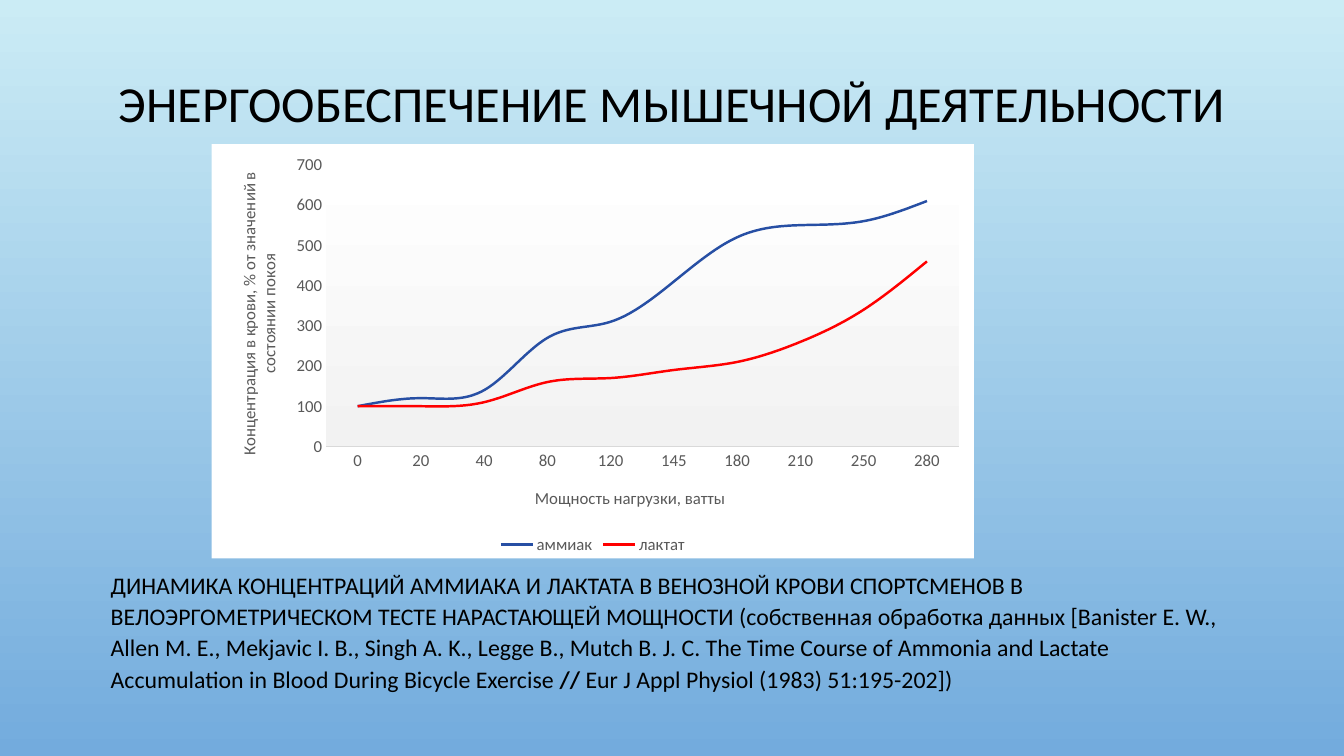
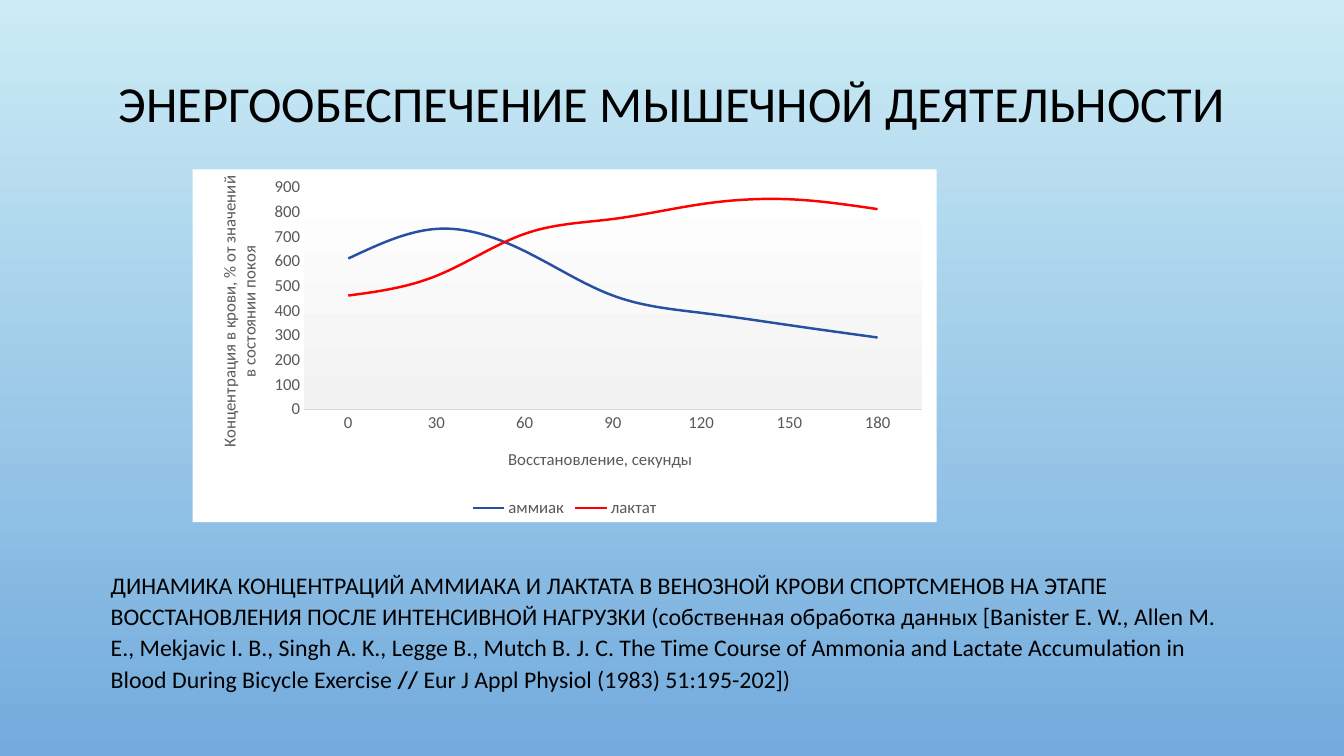
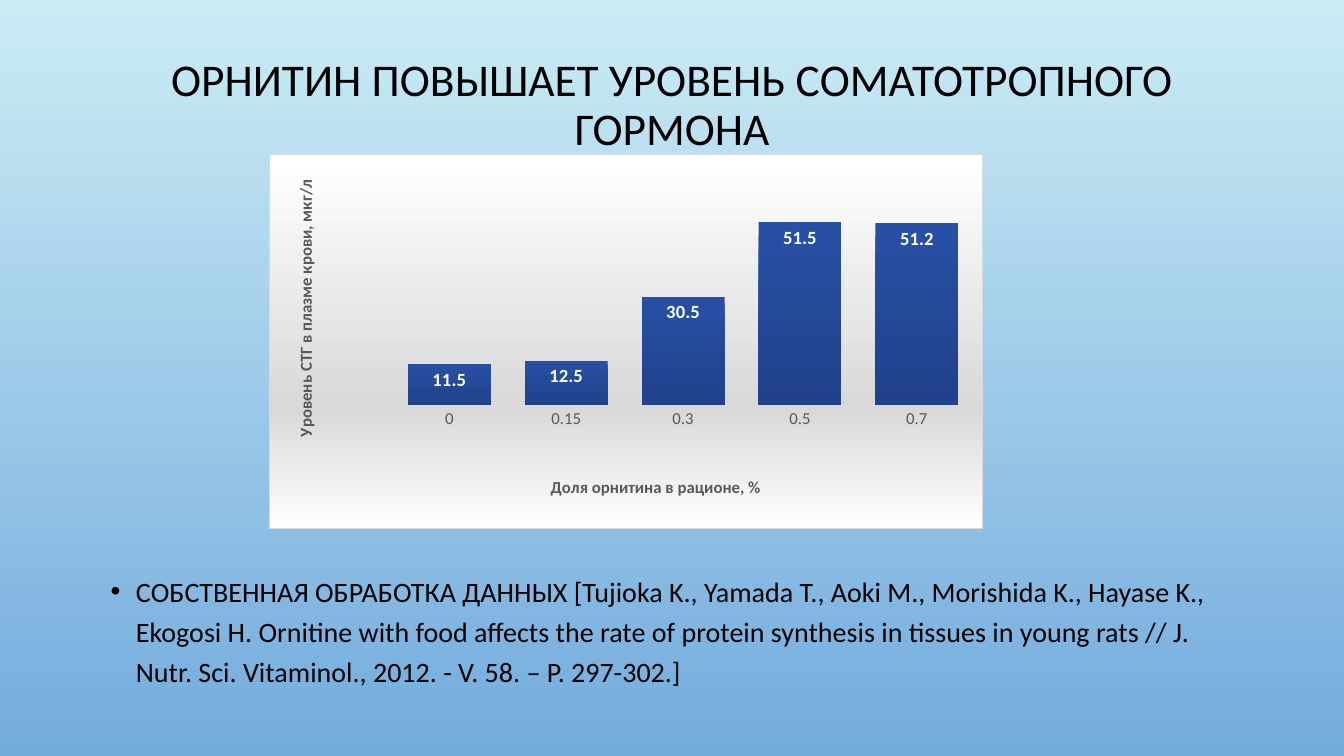
import copy
from dataclasses import dataclass
from typing import Optional

import pptx
import pptx.chart.data
import pptx.dml.color
import pptx.dml.fill
import pptx.dml.line
import pptx.enum.chart
import pptx.enum.text
import pptx.oxml
import pptx.oxml.ns
import pptx.util

Inches = pptx.util.Inches
Pt = pptx.util.Pt
qn = pptx.oxml.ns.qn
Kind = pptx.enum.chart.XL_CHART_TYPE

FACE = "Calibri"
BLACK, WHITE, GREY, RULE = "000000", "FFFFFF", "595959", "D9D9D9"
SKY = [(0, "CBECF5"), (1, "73ABDD")]
PALE = [(0, WHITE), (1, "F2F2F2")]
SILVER = [(0, WHITE), (0.68, RULE), (1, WHITE)]
NAVY = [(0, "274FA4"), (1, "21428A")]
LINES = ["274FA4", "FF0000"]
LEVEL = "Концентрация в крови, % от значений в состоянии покоя"
HEAD = "ЭНЕРГООБЕСПЕЧЕНИЕ МЫШЕЧНОЙ ДЕЯТЕЛЬНОСТИ"
TOPIC = "ДИНАМИКА КОНЦЕНТРАЦИЙ АММИАКА И ЛАКТАТА В ВЕНОЗНОЙ КРОВИ СПОРТСМЕНОВ "
CITE = (
    " (собственная обработка данных [Banister E. W., Allen M. E., Mekjavic I. B., "
    "Singh A. K., Legge B., Mutch B. J. C. The Time Course of Ammonia and Lactate "
    "Accumulation in Blood During Bicycle Exercise "
)
ISSUE = [("// ", True), ("Eur J Appl Physiol (1983) 51:195-202])", False)]


@dataclass
class Label:
    text: str
    spot: tuple[float, float]


@dataclass
class Graph:
    kind: Kind
    box: tuple[float, float, float, float]
    plot: tuple[float, float, float, float]
    across: Label
    up: Label
    cats: list[str]
    rows: dict[str, list[float]]


@dataclass
class Page:
    title: str
    size: float
    note: list[tuple[str, bool]]
    graph: Graph
    point: float = 17
    space: float = 1.1
    bullet: Optional[str] = None


PAGES = [
    Page(
        HEAD, 36,
        [(TOPIC + "В ВЕЛОЭРГОМЕТРИЧЕСКОМ ТЕСТЕ НАРАСТАЮЩЕЙ МОЩНОСТИ" + CITE, False), *ISSUE],
        Graph(
            Kind.LINE, (2.1, 1.43, 7.56, 4.11), (0.15, 0.05, 0.83, 0.68),
            Label("Мощность нагрузки, ватты", (0.42, 0.82)),
            Label(LEVEL, (0.03, 0.06)),
            ["0", "20", "40", "80", "120", "145", "180", "210", "250", "280"],
            {
                "аммиак": [100, 120, 140, 270, 310, 410, 520, 550, 560, 610],
                "лактат": [100, 100, 110, 160, 170, 190, 210, 260, 340, 460],
            },
        ),
    ),
    Page(
        HEAD, 36,
        [(TOPIC + "НА ЭТАПЕ ВОССТАНОВЛЕНИЯ ПОСЛЕ ИНТЕНСИВНОЙ НАГРУЗКИ" + CITE, False), *ISSUE],
        Graph(
            Kind.LINE, (1.91, 1.68, 7.38, 3.5), (0.15, 0.05, 0.83, 0.63),
            Label("Восстановление, секунды", (0.42, 0.78)),
            Label(LEVEL, (0.03, 0.01)),
            ["0", "30", "60", "90", "120", "150", "180"],
            {
                "аммиак": [610, 730, 640, 460, 390, 340, 290],
                "лактат": [460, 540, 710, 770, 830, 850, 810],
            },
        ),
    ),
    Page(
        "ОРНИТИН ПОВЫШАЕТ УРОВЕНЬ СОМАТОТРОПНОГО ГОРМОНА", 32.4,
        [(
            "СОБСТВЕННАЯ ОБРАБОТКА ДАННЫХ [Tujioka K., Yamada T., Aoki M., Morishida K., "
            "Hayase K., Ekogosi H. Ornitine with food affects the rate of protein synthesis "
            "in tissues in young rats // J. Nutr. Sci. Vitaminol., 2012. - V. 58. – P. 297-302.]",
            False,
        )],
        Graph(
            Kind.COLUMN_CLUSTERED, (2.67, 1.53, 7.08, 3.72), (0.17, 0.1, 0.82, 0.57),
            Label("Доля орнитина в рационе, %", (0.39, 0.85)),
            Label("Уровень СТГ в плазме крови, мкг/л", (0.03, 0.06)),
            ["0", "0.15", "0.3", "0.5", "0.7"],
            {"Series 1": [11.5, 12.5, 30.5, 51.5, 51.2]},
        ),
        20, 1.2, "•",
    ),
]


def tint(code: str) -> pptx.dml.color.RGBColor:
    return pptx.dml.color.RGBColor.from_string(code)


def style(font, size: float, code: str, bold: bool = False) -> None:
    font.name, font.size, font.bold = FACE, Pt(size), bold
    font.color.rgb = tint(code)


def shade(fill, stops: list[tuple[float, str]]) -> None:
    fill.gradient()
    fill.gradient_angle = 270
    for stop, (place, code) in zip(fill.gradient_stops, stops):
        stop.position = place
        stop.color.rgb = tint(code)


def blank():
    return pptx.oxml.parse_xml(f"<c:spPr {pptx.oxml.ns.nsdecls('c', 'a')}/>")


def panel(props, stops: list[tuple[float, str]]) -> None:
    fill = pptx.dml.fill.FillFormat.from_fill_parent(props)
    fill.gradient()
    group = props.find(".//" + qn("a:gsLst"))
    for _ in stops[2:]:
        group.append(copy.deepcopy(group[-1]))
    fill.gradient_angle = 270
    for stop, (place, code) in zip(fill.gradient_stops, stops):
        stop.position = place
        stop.color.rgb = tint(code)


def place(host, index: int, **marks) -> None:
    old = host.find(qn("c:layout"))
    if old is not None:
        host.remove(old)
    parts = "".join(f'<c:{key} val="{value}"/>' for key, value in marks.items())
    names = pptx.oxml.ns.nsdecls("c")
    host.insert(index, pptx.oxml.parse_xml(
        f"<c:layout {names}><c:manualLayout>{parts}</c:manualLayout></c:layout>"
    ))


def caption(axis, label: Label, bold: bool, turn: int) -> None:
    frame = axis.axis_title.text_frame
    run = frame.paragraphs[0].add_run()
    run.text = label.text
    style(run.font, 12, GREY, bold)
    host = axis.axis_title.element
    host.find(".//" + qn("a:bodyPr")).set("rot", str(turn))
    left, top = label.spot
    place(host, 1, xMode="edge", yMode="edge", x=left, y=top)


def draw(slide, graph: Graph) -> None:
    data = pptx.chart.data.CategoryChartData()
    data.categories = graph.cats
    for name, values in graph.rows.items():
        data.add_series(name, values)
    chart = slide.shapes.add_chart(graph.kind, *map(Inches, graph.box), data).chart
    bars = graph.kind == Kind.COLUMN_CLUSTERED
    chart.has_title = False
    style(chart.font, 12, GREY)
    base, scale = chart.category_axis, chart.value_axis
    caption(base, graph.across, bars, 0)
    caption(scale, graph.up, bars, -5400000)
    scale.has_major_gridlines = False
    for axis in (base, scale):
        axis.major_tick_mark = pptx.enum.chart.XL_TICK_MARK.NONE
        axis.format.line.fill.background()
    area = chart.element.find(".//" + qn("c:plotArea"))
    left, top, width, height = graph.plot
    place(area, 0, layoutTarget="inner", xMode="edge", yMode="edge",
          x=left, y=top, w=width, h=height)
    props = blank()
    chart.element.find(qn("c:chart")).addnext(props)
    edge = pptx.dml.line.LineFormat(props)
    plot = chart.plots[0]
    plot.vary_by_categories = False
    chart.has_legend = not bars
    if bars:
        panel(props, SILVER)
        edge.width = Pt(0.75)
        edge.color.rgb = tint(RULE)
        scale.visible = False
        plot.gap_width = 41
        shade(plot.series[0].format.fill, NAVY)
        plot.has_data_labels = True
        tags = plot.data_labels
        tags.show_value = True
        tags.position = pptx.enum.chart.XL_LABEL_POSITION.INSIDE_END
        style(tags.font, 13.3, WHITE, True)
        return
    fill = pptx.dml.fill.FillFormat.from_fill_parent(props)
    fill.solid()
    fill.fore_color.rgb = tint(WHITE)
    edge.fill.background()
    inner = blank()
    area.append(inner)
    panel(inner, PALE)
    base.format.line.width = Pt(0.75)
    base.format.line.color.rgb = tint(RULE)
    chart.legend.position = pptx.enum.chart.XL_LEGEND_POSITION.BOTTOM
    chart.legend.include_in_layout = False
    style(chart.legend.font, 12, GREY)
    for row, code in zip(plot.series, LINES):
        row.smooth = True
        row.format.line.width = Pt(1.75)
        row.format.line.color.rgb = tint(code)


def write(frame, runs: list[tuple[str, bool]], size: float, space: float):
    frame.word_wrap = True
    frame.auto_size = pptx.enum.text.MSO_AUTO_SIZE.NONE
    para = frame.paragraphs[0]
    para.line_spacing = space
    for text, bold in runs:
        run = para.add_run()
        run.text = text
        style(run.font, size, BLACK, bold)
    return para


def build(deck, page: Page) -> None:
    slide = deck.slides.add_slide(deck.slide_layouts[5])
    title = slide.shapes.title
    title.left, title.top, title.width, title.height = map(Inches, (1, 0.53, 11.33, 1.05))
    head = write(title.text_frame, [(page.title, False)], page.size, 0.9)
    head.alignment = pptx.enum.text.PP_ALIGN.CENTER
    title.text_frame.vertical_anchor = pptx.enum.text.MSO_ANCHOR.MIDDLE
    note = slide.shapes.add_textbox(*map(Inches, (1, 5.58, 11.33, 1.4)))
    para = write(note.text_frame, page.note, page.point, page.space)
    if page.bullet:
        props = para._p.get_or_add_pPr()
        props.set("marL", str(Inches(0.25)))
        props.set("indent", str(-Inches(0.25)))
        names = pptx.oxml.ns.nsdecls("a")
        for mark in (
            f'<a:buClr {names}><a:srgbClr val="{BLACK}"/></a:buClr>',
            f'<a:buFont {names} typeface="Arial"/>',
            f'<a:buChar {names} char="{page.bullet}"/>',
        ):
            props.append(pptx.oxml.parse_xml(mark))
    draw(slide, page.graph)


def main() -> None:
    deck = pptx.Presentation()
    deck.slide_width, deck.slide_height = Inches(13.33), Inches(7.5)
    shade(deck.slide_master.background.fill, SKY)
    for page in PAGES:
        build(deck, page)
    deck.save("out.pptx")


if __name__ == "__main__":
    main()
